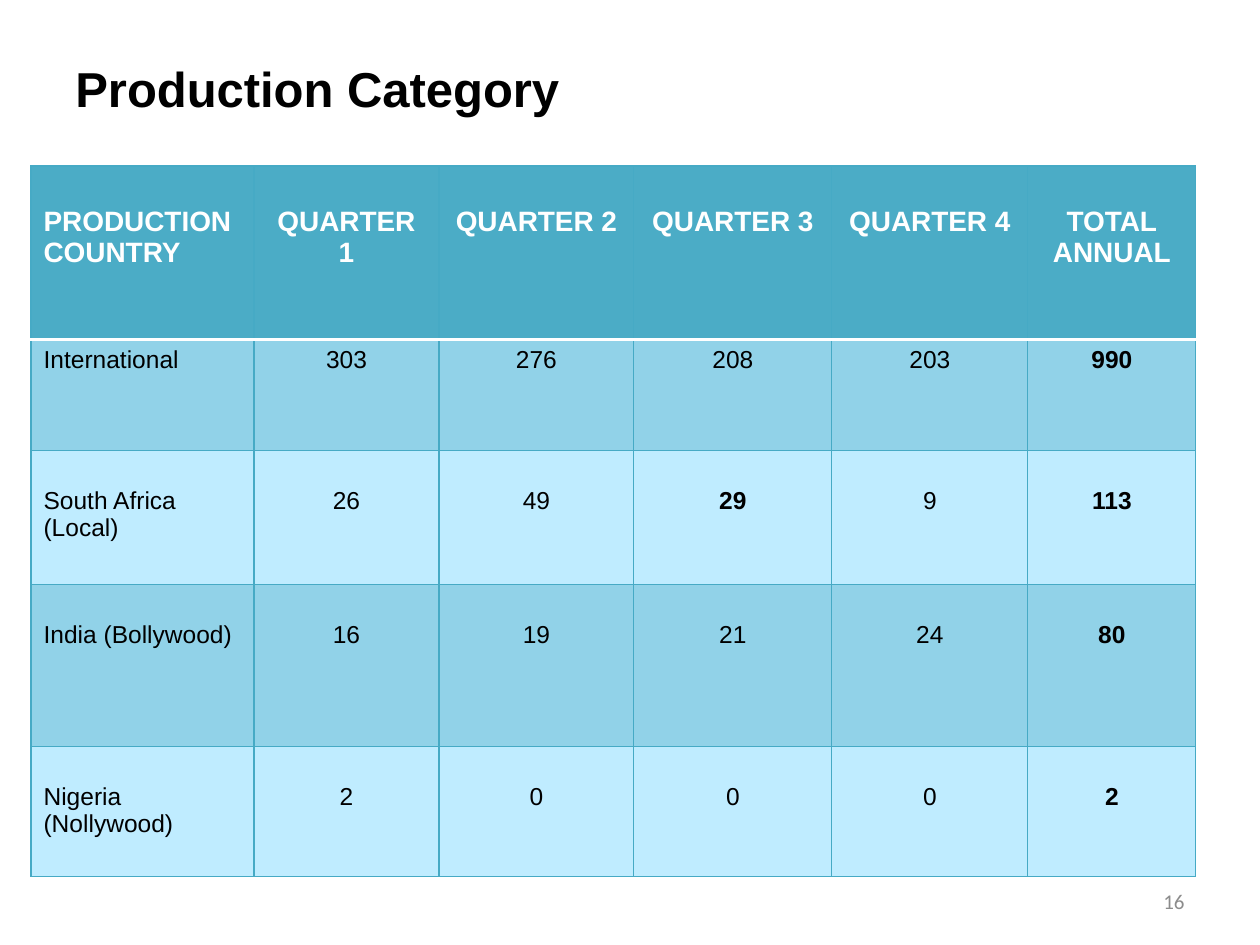
from lxml import etree
from pptx import Presentation
from pptx.dml.color import RGBColor
from pptx.enum.text import MSO_ANCHOR, PP_ALIGN
from pptx.oxml.ns import qn
from pptx.util import Pt

LEFT, CENTER, RIGHT = PP_ALIGN.LEFT, PP_ALIGN.CENTER, PP_ALIGN.RIGHT
MIDDLE = MSO_ANCHOR.MIDDLE
PX = 914400 // 126
HUES = {"head": "4BACC6", "dark": "91D2E8", "light": "BFECFF", "line": "46AAC5",
        "white": "FFFFFF", "black": "000000", "gray": "8C8C8C"}


def write(frame, text, size, hue, bold=False, align=LEFT, font="Arial"):
    """Fill a text frame with one paragraph per line of text."""
    frame.word_wrap = True
    for i, line in enumerate(text.split("\n")):
        para = frame.paragraphs[0] if i == 0 else frame.add_paragraph()
        para.alignment = align
        run = para.add_run()
        run.text = line
        run.font.name = font
        run.font.size = Pt(size)
        run.font.bold = bold
        run.font.color.rgb = RGBColor.from_string(HUES[hue])


def border(cell, side, hue, width):
    line = etree.SubElement(cell._tc.get_or_add_tcPr(), qn("a:ln" + side), w=str(Pt(width)))
    fill = etree.SubElement(line, qn("a:solidFill"))
    etree.SubElement(fill, qn("a:srgbClr"), val=HUES[hue])


deck = Presentation()
deck.slide_width, deck.slide_height = 1260 * PX, 945 * PX
slide = deck.slides.add_slide(deck.slide_layouts[6])

title = slide.shapes.add_textbox(63 * PX, 38 * PX, 1134 * PX, 100 * PX).text_frame
title.vertical_anchor = MIDDLE
write(title, "Production Category", 28, "black", True)

rows = [
    ["PRODUCTION COUNTRY", "QUARTER 1", "QUARTER 2", "QUARTER 3", "QUARTER 4", "TOTAL\nANNUAL"],
    ["International", "303", "276", "208", "203", "990"],
    ["South Africa (Local)", "26", "49", "29", "9", "113"],
    ["India (Bollywood)", "16", "19", "21", "24", "80"],
    ["Nigeria (Nollywood)", "2", "0", "0", "0", "2"],
]
widths = [223, 185, 195, 198, 196, 168]
heights = [174, 111, 134, 162, 130]
tops = [40, 6, 36, 36, 36]

table = slide.shapes.add_table(len(rows), len(widths), 31 * PX, 166 * PX,
                               sum(widths) * PX, sum(heights) * PX).table
for col, width in zip(table.columns, widths):
    col.width = width * PX
for r, row in enumerate(rows):
    table.rows[r].height = heights[r] * PX
    band = "head" if r == 0 else "dark" if r % 2 else "light"
    for c, text in enumerate(row):
        cell = table.cell(r, c)
        cell.margin_top = tops[r] * PX
        for side in "LRTB":
            rule = (r, side) in [(0, "B"), (1, "T")]
            border(cell, side, "white" if rule else "line", 2 if rule else 0.75)
        cell.fill.solid()
        cell.fill.fore_color.rgb = RGBColor.from_string(HUES[band])
        bold = r == 0 or c == 5 or (r, c) == (2, 3)
        write(cell.text_frame, text, 14 if r else 16, "black" if r else "white",
              bold, CENTER if c else LEFT)

number = slide.shapes.add_textbox(903 * PX, 876 * PX, 294 * PX, 50 * PX).text_frame
number.vertical_anchor = MIDDLE
write(number, "16", 12, "gray", align=RIGHT, font="Calibri")

deck.save("out.pptx")
